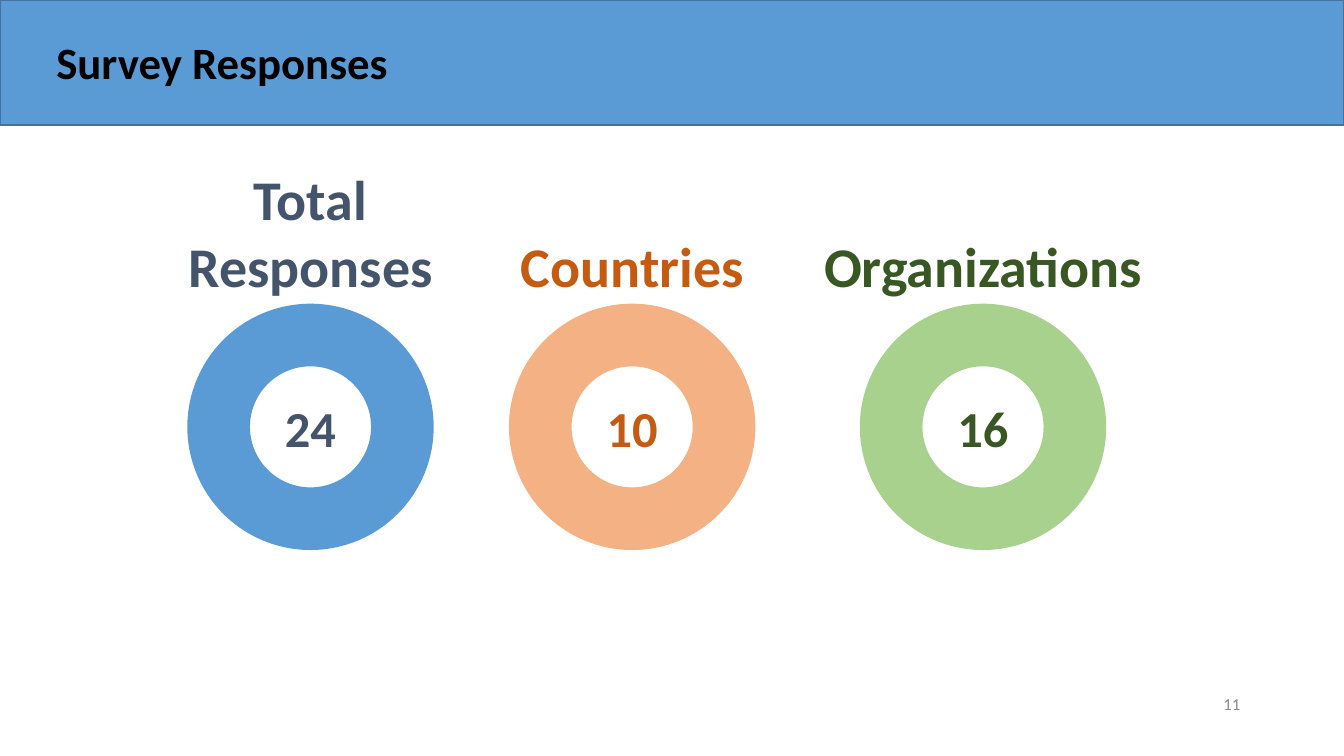
from pptx import Presentation
from pptx.dml.color import RGBColor
from pptx.enum.shapes import MSO_SHAPE
from pptx.enum.text import MSO_ANCHOR, PP_ALIGN
from pptx.util import Inches, Pt

BLUE = RGBColor(0x5B, 0x9B, 0xD5)
BLUE_EDGE = RGBColor(0x43, 0x73, 0x9E)
SLATE = RGBColor(0x44, 0x54, 0x6A)
PEACH = RGBColor(0xF4, 0xB1, 0x83)
RUST = RGBColor(0xC5, 0x5A, 0x11)
LIGHT_GREEN = RGBColor(0xA9, 0xD1, 0x8E)
DARK_GREEN = RGBColor(0x38, 0x57, 0x23)
BLACK = RGBColor(0, 0, 0)
GRAY = RGBColor(0x8C, 0x8C, 0x8C)

TITLE = "Survey Responses"
PAGE_NUMBER = "11"
# label lines, value, center, label width, ring color, text color
STATISTICS = [
    (["Total", "Responses"], "24", 3.08, 2.78, BLUE, SLATE),
    (["Countries"], "10", 6.27, 2.78, PEACH, RUST),
    (["Organizations"], "16", 9.75, 3.45, LIGHT_GREEN, DARK_GREEN),
]
RING_TOP = 3.02
RING_SIZE = 2.43
LINE_HEIGHT = 0.67
LABEL_PADDING = 0.1


def write(shape, text, size, color, bold=True, align=PP_ALIGN.CENTER, anchor=MSO_ANCHOR.MIDDLE):
    text_frame = shape.text_frame
    text_frame.word_wrap = True
    text_frame.vertical_anchor = anchor
    text_frame.text = text
    for paragraph in text_frame.paragraphs:
        paragraph.alignment = align
        for run in paragraph.runs:
            run.font.name = "Calibri"
            run.font.size = Pt(size)
            run.font.bold = bold
            run.font.color.rgb = color


def add_text(slide, left, top, width, height, *content, **style):
    box = slide.shapes.add_textbox(Inches(left), Inches(top), Inches(width), Inches(height))
    write(box, *content, **style)
    return box


def add_filled(slide, kind, left, top, width, height, fill, line):
    shape = slide.shapes.add_shape(kind, Inches(left), Inches(top), Inches(width), Inches(height))
    shape.shadow.inherit = False
    shape.fill.solid()
    shape.fill.fore_color.rgb = fill
    shape.line.color.rgb = line
    shape.line.width = Pt(1)
    return shape


def main():
    presentation = Presentation()
    presentation.slide_width = Inches(13.33)
    presentation.slide_height = Inches(7.5)
    slide = presentation.slides.add_slide(presentation.slide_layouts[6])

    add_text(slide, 11.87, 6.78, 0.53, 0.4, PAGE_NUMBER, 12, GRAY, bold=False, align=PP_ALIGN.RIGHT)
    add_filled(slide, MSO_SHAPE.RECTANGLE, 0, 0, 13.33, 1.24, BLUE, BLUE_EDGE)
    title = add_text(slide, 0.46, 0.11, 11.75, 1.07, TITLE, 32, BLACK, align=PP_ALIGN.LEFT)
    title.text_frame.paragraphs[0].line_spacing = 0.9

    for lines, value, center, label_width, ring_color, text_color in STATISTICS:
        ring = add_filled(slide, MSO_SHAPE.DONUT, center - RING_SIZE / 2, RING_TOP,
                          RING_SIZE, RING_SIZE, ring_color, ring_color)
        write(ring, value, 36, text_color)
        label_height = LABEL_PADDING + LINE_HEIGHT * len(lines)
        add_text(slide, center - label_width / 2, RING_TOP - label_height, label_width,
                 label_height, "\n".join(lines), 40, text_color, anchor=MSO_ANCHOR.TOP)

    presentation.save("out.pptx")


if __name__ == "__main__":
    main()
